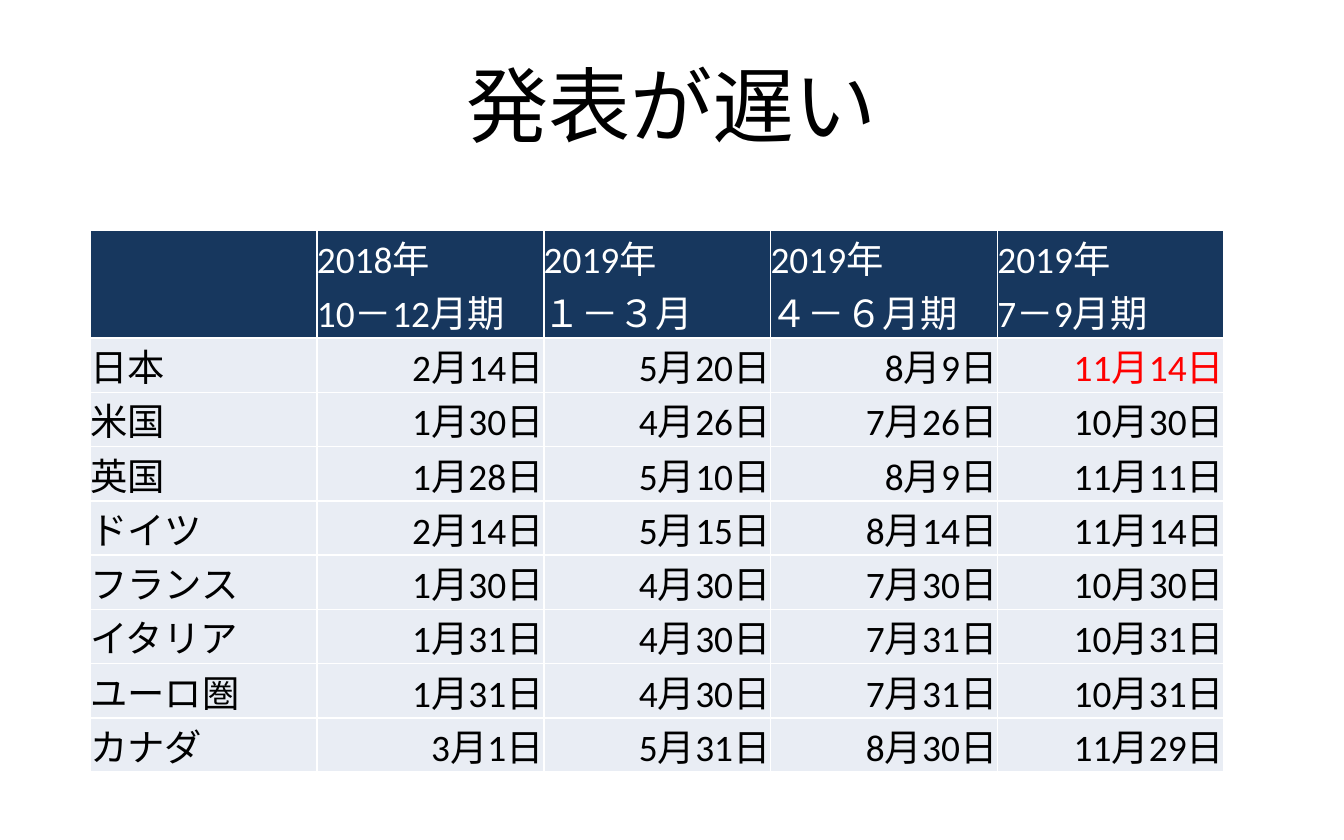
from lxml.etree import SubElement
from pptx import Presentation
from pptx.dml.color import RGBColor
from pptx.enum.text import MSO_ANCHOR, PP_ALIGN
from pptx.oxml.ns import qn
from pptx.util import Inches, Pt

TITLE = "発表が遅い"
HEADER = ["", "2018年\n10－12月期", "2019年\n１－３月", "2019年\n４－６月期", "2019年\n7－9月期"]
RELEASES = [
    ["日本", "2月14日", "5月20日", "8月9日", "11月14日"],
    ["米国", "1月30日", "4月26日", "7月26日", "10月30日"],
    ["英国", "1月28日", "5月10日", "8月9日", "11月11日"],
    ["ドイツ", "2月14日", "5月15日", "8月14日", "11月14日"],
    ["フランス", "1月30日", "4月30日", "7月30日", "10月30日"],
    ["イタリア", "1月31日", "4月30日", "7月31日", "10月31日"],
    ["ユーロ圏", "1月31日", "4月30日", "7月31日", "10月31日"],
    ["カナダ", "3月1日", "5月31日", "8月30日", "11月29日"],
]
LATEST_JAPAN = (1, 4)
COLORS = {
    "header": "17375E",
    "body": "E9EDF4",
    "border": "FFFFFF",
    "header_text": "FFFFFF",
    "text": "000000",
    "highlight": "FF0000",
}
FONT = "Calibri"


def format_text(text_frame, size, color, alignment):
    for paragraph in text_frame.paragraphs:
        paragraph.alignment = alignment
        for run in paragraph.runs:
            run.font.name = FONT
            run.font.size = Pt(size)
            run.font.color.rgb = RGBColor.from_string(COLORS[color])


def add_borders(cell):
    properties = cell._tc.get_or_add_tcPr()
    for side in ("a:lnL", "a:lnR", "a:lnT", "a:lnB"):
        line = SubElement(properties, qn(side), w=str(Pt(1)))
        fill = SubElement(line, qn("a:solidFill"))
        SubElement(fill, qn("a:srgbClr"), val=COLORS["border"])


def fill_cell(cell, text, row, column):
    add_borders(cell)
    cell.fill.solid()
    cell.fill.fore_color.rgb = RGBColor.from_string(COLORS["body" if row else "header"])
    cell.vertical_anchor = MSO_ANCHOR.MIDDLE
    cell.margin_left = cell.margin_right = cell.margin_top = cell.margin_bottom = 0
    cell.text_frame.text = text
    color = "text" if row else "header_text"
    if (row, column) == LATEST_JAPAN:
        color = "highlight"
    alignment = PP_ALIGN.RIGHT if row and column else PP_ALIGN.LEFT
    format_text(cell.text_frame, 20, color, alignment)


def main():
    presentation = Presentation()
    presentation.slide_width = Inches(10)
    presentation.slide_height = Inches(6.25)
    slide = presentation.slides.add_slide(presentation.slide_layouts[5])

    title = slide.shapes.title
    title.left, title.top = Inches(0.5), Inches(0.25)
    title.width, title.height = Inches(9), Inches(1.04)
    title.text_frame.text = TITLE
    title.text_frame.vertical_anchor = MSO_ANCHOR.MIDDLE
    format_text(title.text_frame, 44, "text", PP_ALIGN.CENTER)

    rows = [HEADER] + RELEASES
    height = Inches(3.37)
    frame = slide.shapes.add_table(
        len(rows), len(HEADER), Inches(0.67), Inches(1.71), Inches(8.44), height
    )
    table = frame.table
    for row, texts in enumerate(rows):
        table.rows[row].height = Inches(0.18 if row else 0.35)
        for column, text in enumerate(texts):
            fill_cell(table.cell(row, column), text, row, column)
    frame.height = height

    presentation.save("out.pptx")


if __name__ == "__main__":
    main()
